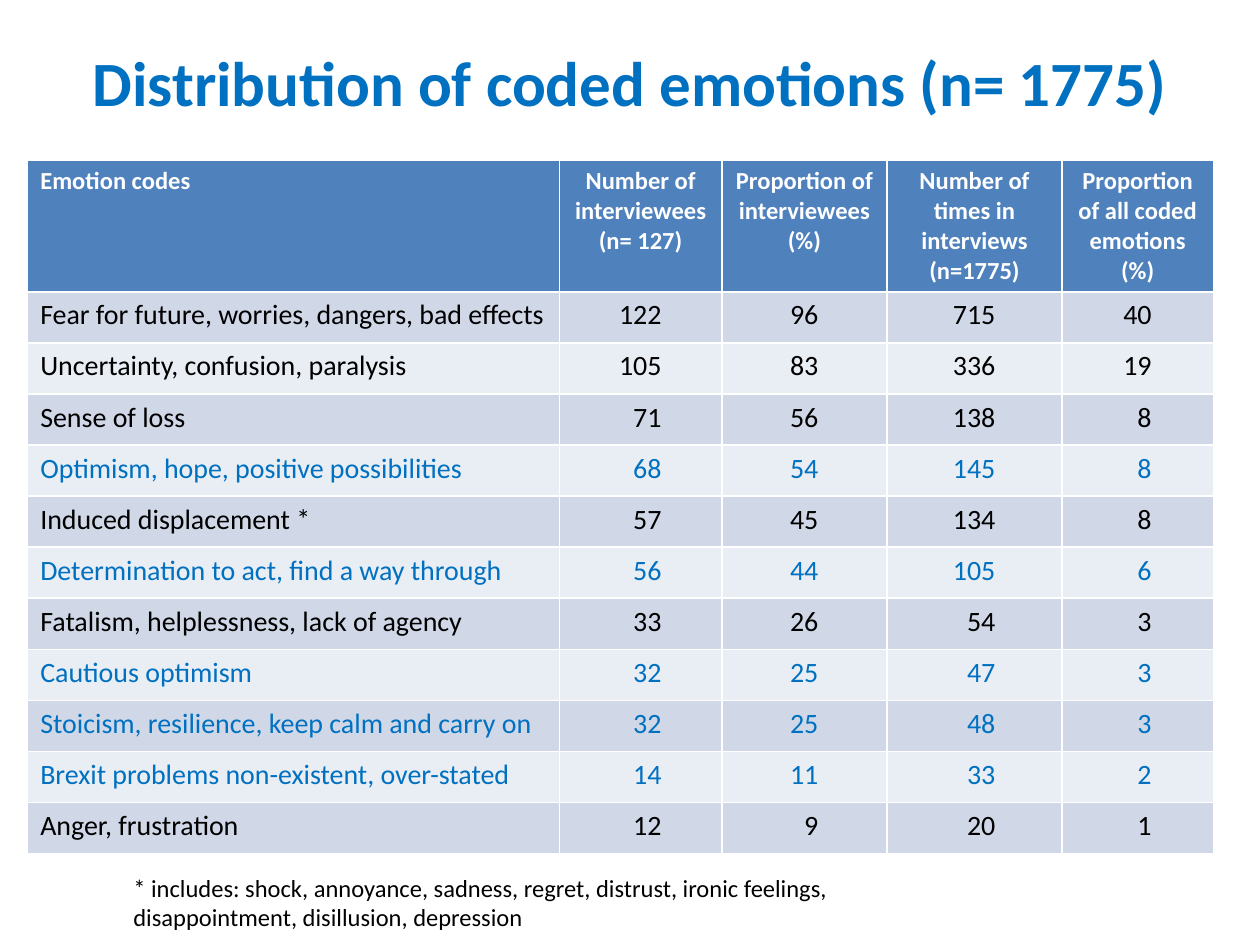
from pptx import Presentation
from pptx.dml.color import RGBColor
from pptx.enum.text import MSO_ANCHOR, PP_ALIGN
from pptx.util import Inches, Pt

LEFT, CENTER, RIGHT = PP_ALIGN.LEFT, PP_ALIGN.CENTER, PP_ALIGN.RIGHT
MIDDLE = MSO_ANCHOR.MIDDLE
TITLE_ONLY = 5

COLORS = {
    "accent": "0070C0",
    "text": "000000",
    "white": "FFFFFF",
    "header": "4F81BD",
    "odd": "D0D8E8",
    "even": "E9EDF4",
}

HEADERS = [
    ["Emotion codes"],
    ["Number of interviewees", "(n= 127)"],
    ["Proportion of interviewees", "(%)"],
    ["Number of times in interviews", "(n=1775)"],
    ["Proportion of all coded emotions", "(%)"],
]
ROWS = [
    ("Fear for future, worries, dangers, bad effects", 122, 96, 715, 40),
    ("Uncertainty, confusion, paralysis", 105, 83, 336, 19),
    ("Sense of loss", 71, 56, 138, 8),
    ("Optimism, hope, positive possibilities", 68, 54, 145, 8),
    ("Induced displacement *", 57, 45, 134, 8),
    ("Determination to act, find a way through", 56, 44, 105, 6),
    ("Fatalism, helplessness, lack of agency", 33, 26, 54, 3),
    ("Cautious optimism", 32, 25, 47, 3),
    ("Stoicism, resilience, keep calm and carry on", 32, 25, 48, 3),
    ("Brexit problems non-existent, over-stated", 14, 11, 33, 2),
    ("Anger, frustration", 12, 9, 20, 1),
]
POSITIVE_ROWS = {4, 6, 8, 9, 10}
COL_WIDTHS = [4.22, 1.29, 1.31, 1.39, 1.2]
HEADER_HEIGHT = 1.03
DIGIT_WIDTH = 0.11


class SlideBuilder:
    font = "Calibri"

    def __init__(self, prs):
        self.s = prs.slides.add_slide(prs.slide_layouts[TITLE_ONLY])

    def fill_text(self, tf, lines, size, color="text", bold=False, align=LEFT):
        style = {"name": self.font, "size": Pt(size), "bold": bold}
        for i, line in enumerate(lines):
            p = tf.paragraphs[0] if i == 0 else tf.add_paragraph()
            p.alignment = align
            r = p.add_run()
            r.text = line
            for name, value in style.items():
                setattr(r.font, name, value)
            r.font.color.rgb = RGBColor.from_string(COLORS[color])

    def title(self, text, x, y, w, h):
        sp = self.s.shapes.title
        box = {"left": x, "top": y, "width": w, "height": h}
        for name, value in box.items():
            setattr(sp, name, Inches(value))
        sp.text_frame.vertical_anchor = MIDDLE
        self.fill_text(sp.text_frame, [text], 36, "accent", True, CENTER)

    def text(self, text, x, y, w, h):
        sp = self.s.shapes.add_textbox(Inches(x), Inches(y), Inches(w), Inches(h))
        sp.text_frame.word_wrap = True
        self.fill_text(sp.text_frame, [text], 14)

    def cell(self, cell, lines, fill, **style):
        cell.fill.solid()
        cell.fill.fore_color.rgb = RGBColor.from_string(COLORS[fill])
        self.fill_text(cell.text_frame, lines, **style)

    def table(self, x, y, h):
        table = self.s.shapes.add_table(
            len(ROWS) + 1, len(HEADERS), Inches(x), Inches(y),
            Inches(sum(COL_WIDTHS)), Inches(h)).table
        for col, width in zip(table.columns, COL_WIDTHS):
            col.width = Inches(width)
        row_height = (h - HEADER_HEIGHT) / len(ROWS)
        for i, row in enumerate(table.rows):
            row.height = Inches(row_height if i else HEADER_HEIGHT)

        for c, lines in enumerate(HEADERS):
            self.cell(table.cell(0, c), lines, "header", size=14, color="white",
                      bold=True, align=CENTER if c else LEFT)

        digits = [max(len(str(v)) for v in column) for column in zip(*ROWS)]
        for i, values in enumerate(ROWS, 1):
            fill = "odd" if i % 2 else "even"
            color = "accent" if i in POSITIVE_ROWS else "text"
            for c, value in enumerate(values):
                cell = table.cell(i, c)
                self.cell(cell, [str(value)], fill, size=16, color=color,
                          align=RIGHT if c else LEFT)
                if c:
                    gap = (COL_WIDTHS[c] - digits[c] * DIGIT_WIDTH) / 2
                    cell.margin_right = Inches(gap)


def main():
    prs = Presentation()
    prs.slide_width, prs.slide_height = Inches(10), Inches(7.5)
    slide = SlideBuilder(prs)
    slide.title("Distribution of coded emotions (n= 1775)", 0.5, 0.02, 9, 1.25)
    slide.table(0.22, 1.27, 5.49)
    slide.text("* includes: shock, annoyance, sadness, regret, distrust, ironic "
               "feelings, disappointment, disillusion, depression",
               0.96, 6.88, 6.29, 0.57)
    prs.save("out.pptx")


if __name__ == "__main__":
    main()
